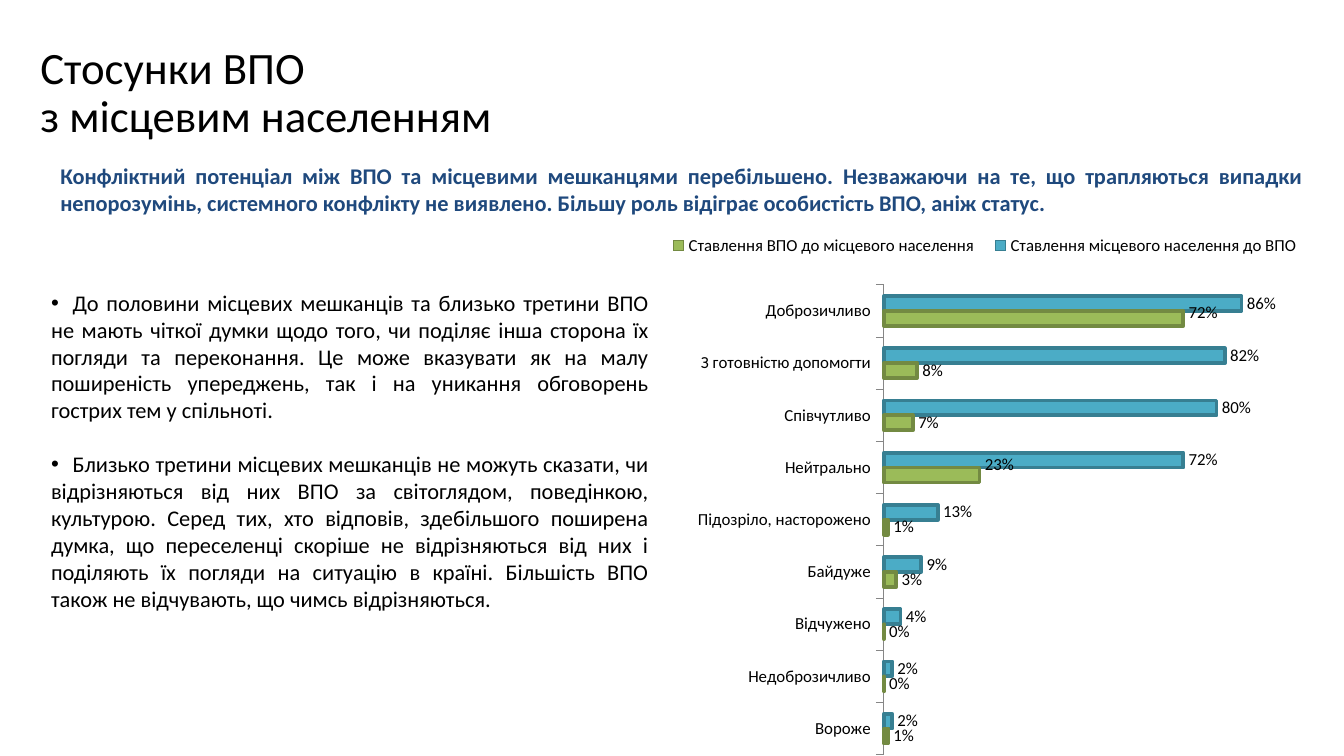
from lxml.etree import SubElement
from pptx import Presentation
from pptx.chart.data import CategoryChartData
from pptx.dml.color import RGBColor
from pptx.enum.chart import XL_CHART_TYPE, XL_LABEL_POSITION, XL_LEGEND_POSITION, XL_TICK_MARK
from pptx.enum.text import MSO_ANCHOR, MSO_AUTO_SIZE, PP_ALIGN
from pptx.oxml import parse_xml
from pptx.oxml.ns import nsdecls, qn
from pptx.util import Inches, Pt

TITLE = "Стосунки ВПО\vз місцевим населенням"
SUMMARY = (
    "Конфліктний потенціал між ВПО та місцевими мешканцями перебільшено. "
    "Незважаючи на те, що трапляються випадки непорозумінь, системного конфлікту "
    "не виявлено. Більшу роль відіграє особистість ВПО, аніж статус."
)
FINDINGS = [
    "До половини місцевих мешканців та близько третини ВПО не мають чіткої думки "
    "щодо того, чи поділяє інша сторона їх погляди та переконання. Це може вказувати "
    "як на малу поширеність упереджень, так і на уникання обговорень гострих тем "
    "у спільноті.",
    "Близько третини місцевих мешканців не можуть сказати, чи відрізняються від них "
    "ВПО за світоглядом, поведінкою, культурою. Серед тих, хто відповів, здебільшого "
    "поширена думка, що переселенці скоріше не відрізняються від них і поділяють їх "
    "погляди на ситуацію в країні. Більшість ВПО також не відчувають, що чимсь "
    "відрізняються.",
]
ATTITUDES = [
    ("Доброзичливо", 0.86, 0.72),
    ("З готовністю допомогти", 0.82, 0.08),
    ("Співчутливо", 0.80, 0.07),
    ("Нейтрально", 0.72, 0.23),
    ("Підозріло, насторожено", 0.13, 0.01),
    ("Байдуже", 0.09, 0.03),
    ("Відчужено", 0.04, 0),
    ("Недоброзичливо", 0.02, 0),
    ("Вороже", 0.02, 0.01),
]
SERIES = [
    {"name": "Ставлення місцевого населення до ВПО", "fill": "local", "line": "local_edge",
     "raised_labels": {}},
    {"name": "Ставлення ВПО до місцевого населення", "fill": "settler", "line": "settler_edge",
     "raised_labels": {0: -0.01, 3: -0.02}},
]
THEME = {
    "font": "Calibri",
    "sizes": {"title": 24, "body": 12, "chart": 9},
    "colors": {
        "text": "000000", "summary": "1F497D", "axis": "868686",
        "local": "4BACC6", "local_edge": "377F92",
        "settler": "9BBB59", "settler_edge": "738A42",
    },
}
PLACES = {
    "title": (0.2, 0.29, 8.8, 0.71),
    "summary": (0.35, 1.16, 9.45, 0.55),
    "chart": (4.29, 1.71, 5.47, 3.91),
    "findings": (0.28, 2.1, 4.65, 2.52),
}
PLOT_AREA = {"x": 0.42, "y": 0.1, "w": 0.57, "h": 0.9}
PLOT_AREA = {"x": 0.418, "y": 0.105, "w": 0.566, "h": 0.895}
LEGEND_AREA = {"x": 0.11, "y": 0, "w": 0.89, "h": 0.06}


def color(name):
    return RGBColor.from_string(THEME["colors"][name])


def set_all(target, values):
    for name, value in values.items():
        setattr(target, name, value)


def set_font(font, size, color_name="text", bold=False):
    set_all(font, {"name": THEME["font"], "size": Pt(THEME["sizes"][size]), "bold": bold})
    font.color.rgb = color(color_name)


def place(shape, name):
    edges = map(Inches, PLACES[name])
    set_all(shape, dict(zip(("left", "top", "width", "height"), edges)))


def manual_layout(values, inner=False, edge=True):
    layout = parse_xml(f"<c:layout {nsdecls('c')}><c:manualLayout/></c:layout>")
    manual = layout[0]
    if inner:
        SubElement(manual, qn("c:layoutTarget"), val="inner")
    if edge:
        for mode in ("xMode", "yMode"):
            SubElement(manual, qn(f"c:{mode}"), val="edge")
    for key, value in values.items():
        SubElement(manual, qn(f"c:{key}"), val=str(value))
    return layout


def replace_layout(parent, layout, index):
    for old in parent.findall(qn("c:layout")):
        parent.remove(old)
    parent.insert(index, layout)


def add_title(page):
    box = page.shapes.title
    place(box, "title")
    frame = box.text_frame
    frame.text = TITLE
    set_all(frame, {"word_wrap": True, "auto_size": MSO_AUTO_SIZE.NONE,
                    "vertical_anchor": MSO_ANCHOR.TOP})
    para = frame.paragraphs[0]
    set_all(para, {"alignment": PP_ALIGN.LEFT, "line_spacing": 0.9})
    for span in para.runs:
        set_font(span.font, "title")


def add_summary(page):
    box = page.shapes.add_textbox(*map(Inches, PLACES["summary"]))
    frame = box.text_frame
    frame.word_wrap = True
    para = frame.paragraphs[0]
    para.alignment = PP_ALIGN.JUSTIFY
    span = para.add_run()
    span.text = SUMMARY
    set_font(span.font, "body", "summary", bold=True)


def add_findings(page):
    box = page.placeholders[1]
    place(box, "findings")
    frame = box.text_frame
    set_all(frame, {"word_wrap": True, "auto_size": MSO_AUTO_SIZE.SHAPE_TO_FIT_TEXT})
    for number, finding in enumerate(FINDINGS):
        para = frame.add_paragraph() if number else frame.paragraphs[0]
        set_all(para, {"alignment": PP_ALIGN.JUSTIFY, "space_before": Pt(14.6 if number else 0)})
        properties = para._p.get_or_add_pPr()
        properties.set("marL", "0")
        properties.set("indent", "0")
        SubElement(properties, qn("a:buFont"), typeface="Arial")
        SubElement(properties, qn("a:buChar"), char="•")
        tabs = SubElement(properties, qn("a:tabLst"))
        SubElement(tabs, qn("a:tab"), pos=str(Inches(0.16)), algn="l")
        span = para.add_run()
        span.text = "\t" + finding
        set_font(span.font, "body")


def format_series(series, style):
    series.format.fill.solid()
    series.format.fill.fore_color.rgb = color(style["fill"])
    series.format.line.color.rgb = color(style["line"])
    series.format.line.width = Pt(2)
    labels = series.data_labels
    set_all(labels, {"show_value": True, "number_format": "0%",
                     "number_format_is_linked": False,
                     "position": XL_LABEL_POSITION.OUTSIDE_END})
    for index in style["raised_labels"]:
        series.points[index].data_label.position = XL_LABEL_POSITION.OUTSIDE_END
    for label in labels._element.findall(qn("c:dLbl")):
        shift = style["raised_labels"][int(label.find(qn("c:idx")).get("val"))]
        replace_layout(label, manual_layout({"x": 0, "y": shift}, edge=False), 1)


def add_attitude_chart(page):
    names, *columns = zip(*ATTITUDES)
    data = CategoryChartData(number_format="0%")
    data.categories = names
    for style, values in zip(SERIES, columns):
        data.add_series(style["name"], values)
    chart = page.shapes.add_chart(
        XL_CHART_TYPE.BAR_CLUSTERED, *map(Inches, PLACES["chart"]), data).chart
    set_font(chart.font, "chart")
    set_all(chart, {"has_title": False, "has_legend": True})
    set_all(chart.legend, {"position": XL_LEGEND_POSITION.TOP, "include_in_layout": False})
    replace_layout(chart.legend._element, manual_layout(LEGEND_AREA), 1)
    replace_layout(chart._chartSpace.chart.plotArea, manual_layout(PLOT_AREA, inner=True), 0)

    set_all(chart.category_axis, {"reverse_order": True, "has_major_gridlines": False,
                                  "major_tick_mark": XL_TICK_MARK.OUTSIDE})
    chart.category_axis.format.line.color.rgb = color("axis")
    chart.category_axis.format.line.width = Pt(0.5)
    set_all(chart.value_axis, {"visible": False, "has_major_gridlines": False,
                               "minimum_scale": 0, "maximum_scale": 1})
    plot = chart.plots[0]
    set_all(plot, {"vary_by_categories": False, "gap_width": 150, "overlap": 0})
    for series, style in zip(plot.series, SERIES):
        format_series(series, style)


def main():
    deck = Presentation()
    set_all(deck, {"slide_width": Inches(10), "slide_height": Inches(10 * 9 / 16)})
    page = deck.slides.add_slide(deck.slide_layouts[1])
    add_title(page)
    add_summary(page)
    add_attitude_chart(page)
    add_findings(page)
    deck.save("out.pptx")


if __name__ == "__main__":
    main()
